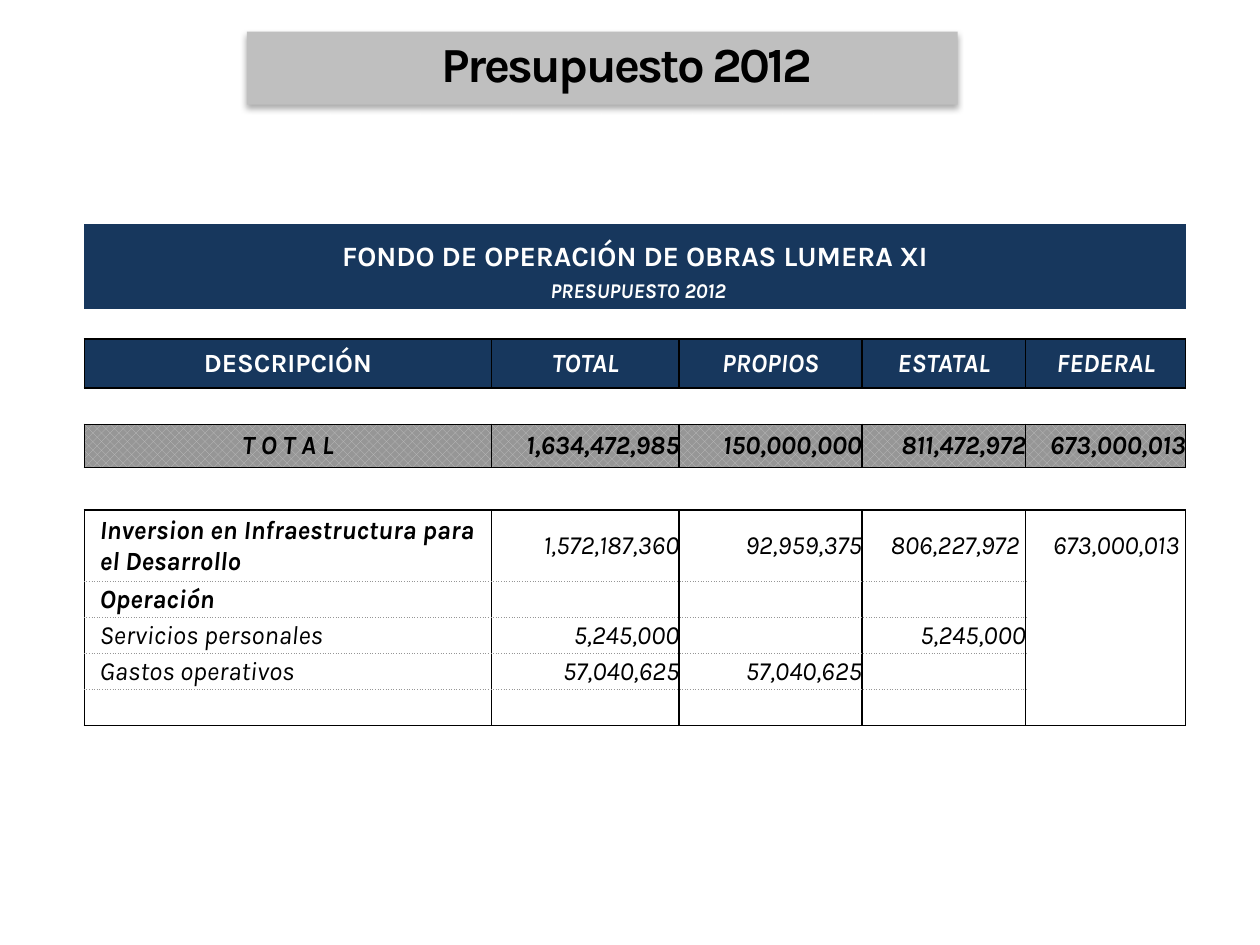
from lxml import etree
from pptx import Presentation
from pptx import util as u
from pptx.dml.color import RGBColor
from pptx.enum import dml, shapes, text
from pptx.oxml.ns import qn

COLORS = {"navy": "17375D", "white": "FFFFFF", "black": "000000",
          "banner": "BFBFBF", "silver": "C0C0C0", "gray": "969696"}
SOLID, DOTTED = ("black", 1, "solid"), ("gray", 0.5, "sysDot")
BOX = dict.fromkeys("LRTB", SOLID)
GAP = {"T": SOLID, "B": SOLID}
BODY = {"L": SOLID, "R": SOLID, "T": DOTTED, "B": DOTTED}
CENTER, RIGHT, LEFT = text.PP_ALIGN.CENTER, text.PP_ALIGN.RIGHT, text.PP_ALIGN.LEFT


def rgb(name):
    return RGBColor.from_string(COLORS[name])


class SlideBuilder:
    def __init__(self, prs, font):
        self.s = prs.slides.add_slide(prs.slide_layouts[5])
        self.font = font

    def place(self, sp, x, y, w, h):
        sp.left, sp.top = u.Inches(x), u.Inches(y)
        sp.width, sp.height = u.Inches(w), u.Inches(h)

    def style(self, p, size, color="black", bold=False, italic=False, align=CENTER):
        p.alignment = align
        f = p.font
        f.name, f.size, f.bold, f.italic = self.font, u.Pt(size), bold, italic
        f.color.rgb = rgb(color)

    def banner(self, x, y, w, h):
        sp = self.s.shapes.add_shape(shapes.MSO_SHAPE.RECTANGLE, u.Inches(x),
                                     u.Inches(y), u.Inches(w), u.Inches(h))
        sp.fill.solid()
        sp.fill.fore_color.rgb = rgb("banner")
        sp.line.fill.background()
        sp.shadow.inherit = False
        effects = sp.element.spPr.find(qn("a:effectLst"))
        shadow = etree.SubElement(effects, qn("a:outerShdw"), blurRad=str(u.Pt(3.5)),
                                  dist=str(u.Pt(2.2)), dir="5400000", rotWithShape="0")
        color = etree.SubElement(shadow, qn("a:srgbClr"), val=COLORS["black"])
        etree.SubElement(color, qn("a:alpha"), val="32000")

    def title(self, words, x, y, w, h):
        sp = self.s.shapes.title
        self.place(sp, x, y, w, h)
        sp.element.getparent().append(sp.element)  # in front of the banner
        tf = sp.text_frame
        tf.text = words
        tf.auto_size = text.MSO_AUTO_SIZE.NONE
        tf.vertical_anchor = text.MSO_ANCHOR.TOP
        p = tf.paragraphs[0]
        self.style(p, 28, bold=True)
        p.line_spacing = u.Pt(23)
        p.runs[0].font._element.set("spc", "-150")

    def table(self, x, y, widths, heights):
        frame = self.s.shapes.add_table(len(heights), len(widths), u.Inches(x), u.Inches(y),
                                        u.Inches(sum(widths)), u.Inches(sum(heights)))
        tbl = frame.table
        tbl.first_row = tbl.horz_banding = False
        for col, w in zip(tbl.columns, widths):
            col.width = u.Inches(w)
        for row, h in zip(tbl.rows, heights):
            row.height = u.Inches(h)
        return tbl

    def borders(self, cell, lines):
        tcPr = cell._tc.get_or_add_tcPr()
        for side in "LRTB":
            ln = etree.SubElement(tcPr, qn(f"a:ln{side}"))
            if side not in lines:
                etree.SubElement(ln, qn("a:noFill"))
                continue
            color, width, dash = lines[side]
            ln.set("w", str(u.Pt(width)))
            fill = etree.SubElement(ln, qn("a:solidFill"))
            etree.SubElement(fill, qn("a:srgbClr"), val=COLORS[color])
            etree.SubElement(ln, qn("a:prstDash"), val=dash)

    def cell(self, cell, words="", lines=None, fill=None, indent=0, right=0,
             anchor=text.MSO_ANCHOR.MIDDLE, size=15, **style):
        self.borders(cell, lines or {})
        if fill == "pattern":
            cell.fill.patterned()
            cell.fill.pattern = dml.MSO_PATTERN.PERCENT_50
            cell.fill.fore_color.rgb = rgb("silver")
            cell.fill.back_color.rgb = rgb("gray")
        elif fill:
            cell.fill.solid()
            cell.fill.fore_color.rgb = rgb(fill)
        else:
            cell.fill.background()
        cell.margin_left, cell.margin_right = u.Inches(indent), u.Inches(right)
        cell.margin_top = cell.margin_bottom = 0
        cell.vertical_anchor = anchor
        cell.text = words
        self.style(cell.text_frame.paragraphs[0], size if words else 10, **style)


def main():
    prs = Presentation()
    prs.slide_width, prs.slide_height = u.Inches(10), u.Inches(7.5)
    b = SlideBuilder(prs, "Karla")

    # Heading
    b.banner(1.96, 0.25, 5.64, 0.58)
    b.title("Presupuesto 2012", 1.8, 0.36, 6.35, 0.5)

    # Table grid
    widths = [3.23, 1.49, 1.45, 1.3, 1.27]
    heights = [0.39, 0.28, 0.24, 0.39, 0.29, 0.34, 0.34, 0.57, 0.28, 0.29, 0.28, 0.29]
    tbl = b.table(0.67, 1.78, widths, heights)
    last = len(widths) - 1

    # Table heading, merged across
    for row, words, look in [
            (0, "FONDO DE OPERACIÓN DE OBRAS LUMERA XI",
             dict(size=16, anchor=text.MSO_ANCHOR.BOTTOM)),
            (1, "PRESUPUESTO 2012", dict(size=12, italic=True, indent=0.05))]:
        for c in range(last + 1):
            b.cell(tbl.cell(row, c), words if c == 0 else "", fill="navy",
                   color="white", bold=True, **look)
        tbl.cell(row, 0).merge(tbl.cell(row, last))

    # Blank spacer rows
    for row, lines in [(2, {"B": SOLID}), (4, GAP), (6, GAP)]:
        for c in range(last + 1):
            b.cell(tbl.cell(row, c), lines=lines)

    # Column names and totals
    names = ["DESCRIPCIÓN", "TOTAL", "PROPIOS", "ESTATAL", "FEDERAL"]
    totals = ["T O T A L", "1,634,472,985", "150,000,000", "811,472,972", "673,000,013"]
    for c, (name, total) in enumerate(zip(names, totals)):
        b.cell(tbl.cell(3, c), name, BOX, "navy", color="white", bold=True, italic=c > 0)
        b.cell(tbl.cell(5, c), total, BOX, "pattern", bold=True, italic=True,
               align=RIGHT if c else CENTER)

    # Budget lines
    budget = [
        ["Inversion en Infraestructura para el Desarrollo",
         "1,572,187,360", "92,959,375", "806,227,972", "673,000,013"],
        ["Operación", "", "", "", ""],
        ["Servicios personales", "5,245,000", "", "5,245,000", ""],
        ["Gastos operativos", "57,040,625", "57,040,625", "", ""],
        [""] * 5,
    ]
    for i, values in enumerate(budget):
        for c, value in enumerate(values):
            lines = {k: v for k, v in BODY.items() if c < last or v is SOLID}
            if i == 0:
                lines["T"] = SOLID
            if i == len(budget) - 1:
                lines["B"] = SOLID
            b.cell(tbl.cell(7 + i, c), value, lines, italic=True,
                   bold=c == 0 and i < 2, align=RIGHT if c else LEFT,
                   indent=0 if c else 0.12, right=0.05 if i == 0 and c > 2 else 0)

    prs.save("out.pptx")


if __name__ == "__main__":
    main()
